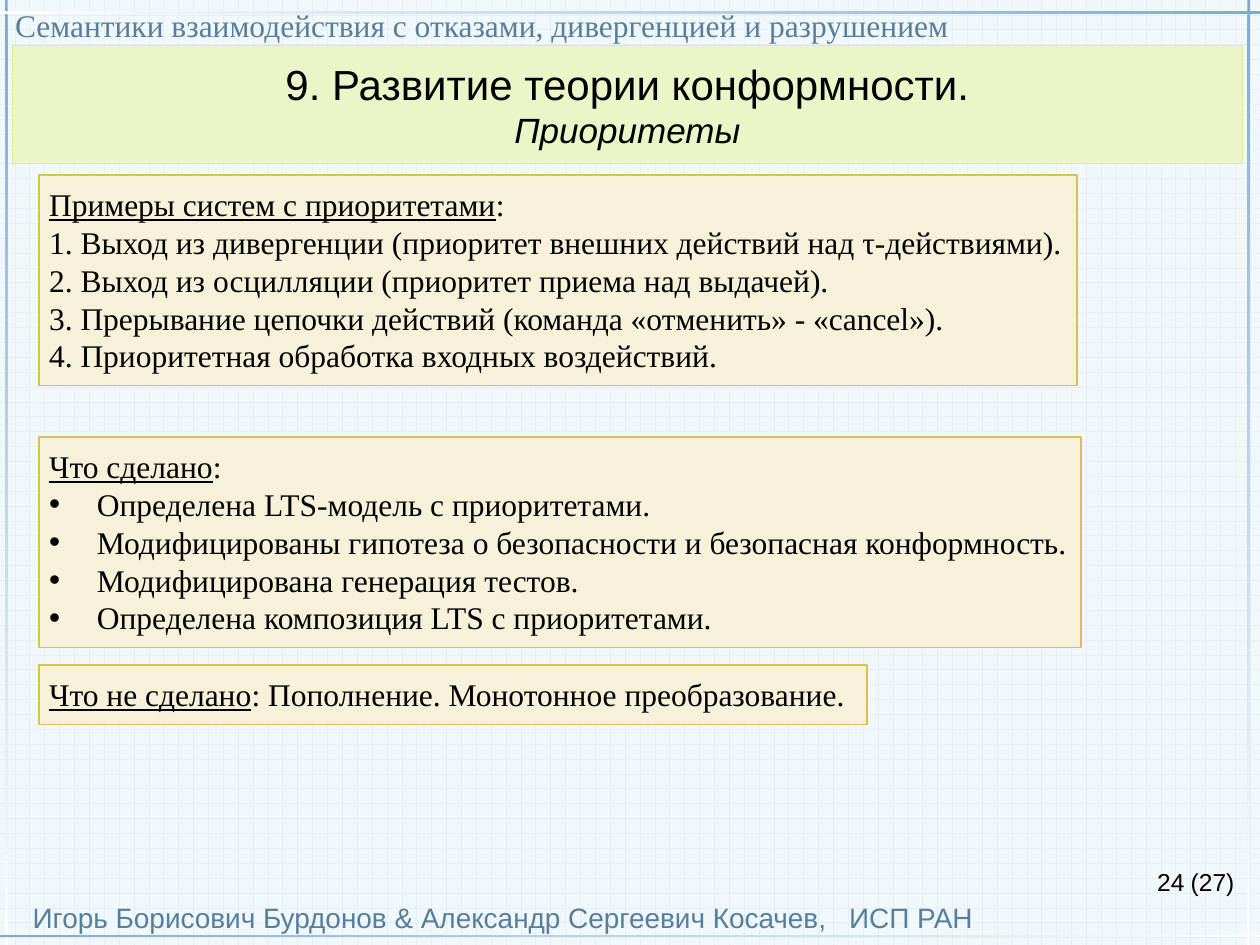
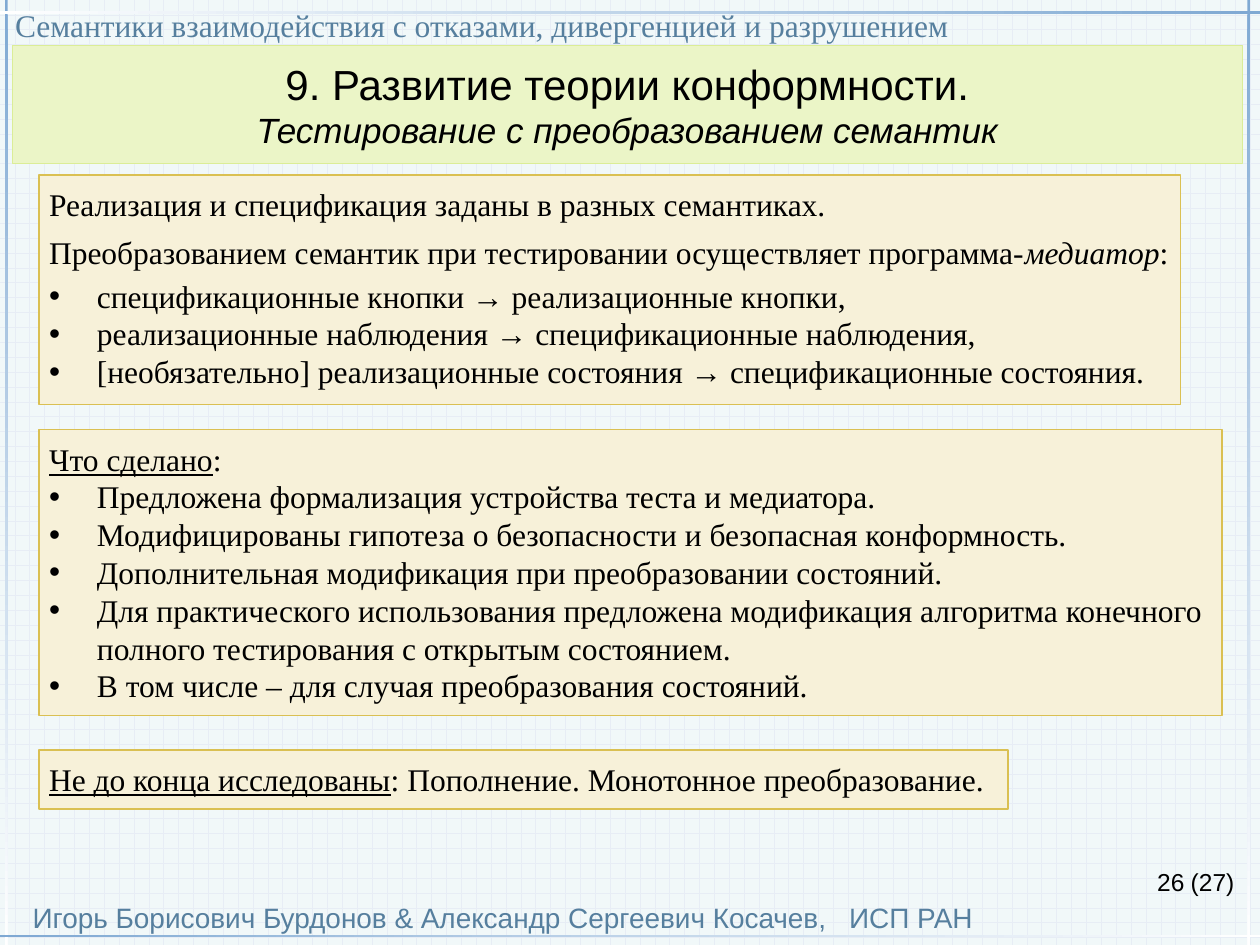
from lxml.etree import SubElement
from pptx import Presentation
from pptx.dml.color import RGBColor
from pptx.enum.dml import MSO_PATTERN
from pptx.enum.shapes import MSO_SHAPE
from pptx.enum.text import MSO_ANCHOR, MSO_AUTO_SIZE, PP_ALIGN
from pptx.oxml.ns import qn
from pptx.util import Inches, Pt

SANS, SERIF = "Arial", "Times New Roman"
BLACK, SLATE, BLUE, WHITE = "000000", "567F9E", "7FA9D3", "FFFFFF"
LIME, MOSS, CREAM, GOLD = "EBF5C7", "DBED97", "F7F1D9", "DAC052"
PAPER, GRID = "F1F8F9", "E7EDF5"
WIDE, HIGH, RULE = 10, 7.5, 0.02
LEFT, HANG, PAD = 0.31, 0.38, 0.08
TOTAL = 27
TOPIC = "Семантики взаимодействия с отказами, дивергенцией и разрушением"
TEAM = "Игорь Борисович Бурдонов & Александр Сергеевич Косачев,"
HOME = "ИСП РАН"
HEAD = "9. Развитие теории конформности."


def tint(code):
    return RGBColor.from_string(code)


def under(label, rest=":"):
    return {"runs": [(label, {"underline": True}), (rest, {})]}


def point(words, **more):
    return {"runs": [(words, {})], "dot": True, **more}


def plain(words, **more):
    return {"runs": [(words, {})], **more}


def write(shape, paras, size=18, face=SERIF, color=BLACK, align=PP_ALIGN.LEFT,
          anchor=MSO_ANCHOR.TOP, pad=(0, 0), wrap=True, grow=False, hang=0, tab=0):
    frame = shape.text_frame
    frame.word_wrap = wrap
    frame.auto_size = MSO_AUTO_SIZE.SHAPE_TO_FIT_TEXT if grow else MSO_AUTO_SIZE.NONE
    frame.vertical_anchor = anchor
    frame.margin_left = frame.margin_right = Inches(pad[0])
    frame.margin_top = frame.margin_bottom = Inches(pad[1])
    for i, item in enumerate(paras):
        para = frame.add_paragraph() if i else frame.paragraphs[0]
        para.alignment = align
        props = para._p.get_or_add_pPr()
        if hang:
            props.set("marL", str(Inches(hang)))
            props.set("indent", str(-Inches(hang)))
        if item.get("dot"):
            SubElement(props, qn("a:buFont"), typeface=SANS)
            SubElement(props, qn("a:buChar"), char="•")
        if tab:
            stops = SubElement(props, qn("a:tabLst"))
            SubElement(stops, qn("a:tab"), pos=str(Inches(tab)), algn="l")
        if "before" in item:
            para.space_before = Pt(item["before"])
        for words, style in item["runs"]:
            for j, line in enumerate(words.split("\n")):
                if j:
                    para.add_line_break()
                run = para.add_run()
                run.text = line
                font = run.font
                font.name, font.size = face, Pt(size)
                font.color.rgb = tint(color)
                for name, value in style.items():
                    setattr(font, name, value)


def label(slide, box, words, **style):
    shape = slide.shapes.add_textbox(*map(Inches, box))
    write(shape, [plain(words)], **style)


def panel(slide, box, fill, edge, width):
    shape = slide.shapes.add_shape(MSO_SHAPE.RECTANGLE, *map(Inches, box))
    shape.shadow.inherit = False
    shape.fill.solid()
    shape.fill.fore_color.rgb = tint(fill)
    shape.line.color.rgb = tint(edge)
    shape.line.width = Pt(width)
    return shape


def fade(slide, box, angle):
    bar = slide.shapes.add_shape(MSO_SHAPE.RECTANGLE, *map(Inches, box))
    bar.shadow.inherit = False
    bar.line.fill.background()
    bar.fill.gradient()
    bar.fill.gradient_angle = angle
    for stop, code, place in zip(bar.fill.gradient_stops, (BLUE, WHITE), (0, 1)):
        stop.color.rgb = tint(code)
        stop.position = place


def border(slide):
    for x in (0.04, 9.9):
        fade(slide, (x, 0, RULE, HIGH), 270)
    for y, angle in ((0.09, 180), (7.42, 0)):
        fade(slide, (0, y, WIDE, RULE), angle)


def frame(slide, page):
    fill = slide.background.fill
    fill.patterned()
    fill.pattern = MSO_PATTERN.HORIZONTAL_BRICK
    fill.fore_color.rgb, fill.back_color.rgb = tint(GRID), tint(PAPER)
    border(slide)
    label(slide, (0.12, 0.05, 9.73, 0.3), TOPIC, color=SLATE)
    label(slide, (0.26, 7.14, 9, 0.27), f"{TEAM}\t{HOME}", size=16, face=SANS,
          color=SLATE, anchor=MSO_ANCHOR.BOTTOM, tab=6.48)
    label(slide, (7.17, 6.83, 2.33, 0.52), str(page), size=14, face=SANS,
          align=PP_ALIGN.RIGHT, pad=(0.1, 0.05))
    label(slide, (9.45, 6.88, 0.35, 0.24), f"({TOTAL})", size=14, face=SANS, wrap=False)


def title(slide, theme):
    shape = panel(slide, (0.1, 0.36, 9.76, 0.94), LIME, MOSS, 0.75)
    runs = [(HEAD + "\n", {}), (theme, {"size": Pt(20), "italic": True})]
    write(shape, [{"runs": runs}], size=24, face=SANS, align=PP_ALIGN.CENTER,
          anchor=MSO_ANCHOR.MIDDLE, pad=(0, 0.1), grow=True)


def note(slide, top, width, height, paras):
    shape = panel(slide, (LEFT, top, width, height), CREAM, GOLD, 1)
    write(shape, paras, pad=(PAD, PAD), wrap=False, grow=True, hang=HANG)


def build(deck, page, theme, notes):
    slide = deck.slides.add_slide(deck.slide_layouts[6])
    frame(slide, page)
    title(slide, theme)
    for item in notes:
        note(slide, *item)


SAFE = "Модифицированы гипотеза о безопасности и безопасная конформность."
REST = ": Пополнение. Монотонное преобразование."

RANKS = [
    (1.39, 8.24, 1.67, [
        under("Примеры систем с приоритетами"),
        plain("1. Выход из дивергенции (приоритет внешних действий над τ-действиями)."),
        plain("2. Выход из осцилляции (приоритет приема над выдачей)."),
        plain("3. Прерывание цепочки действий (команда «отменить» - «cancel»)."),
        plain("4. Приоритетная обработка входных воздействий."),
    ]),
    (3.47, 8.27, 1.67, [
        under("Что сделано"),
        point("Определена LTS-модель с приоритетами."),
        point(SAFE),
        point("Модифицирована генерация тестов."),
        point("Определена композиция LTS с приоритетами."),
    ]),
    (5.28, 6.57, 0.47, [under("Что не сделано", REST)]),
]

TESTS = [
    (1.39, 9.06, 1.82, [
        plain("Реализация и спецификация заданы в разных семантиках."),
        {"runs": [
            ("Преобразованием семантик при тестировании осуществляет программа-", {}),
            ("медиатор", {"italic": True}),
            (":", {}),
        ], "before": 5.4},
        point("спецификационные кнопки → реализационные кнопки,", before=3.6),
        point("реализационные наблюдения → спецификационные наблюдения,"),
        point("[необязательно] реализационные состояния → спецификационные состояния."),
    ]),
    (3.41, 9.39, 2.27, [
        under("Что сделано"),
        point("Предложена формализация устройства теста и медиатора."),
        point(SAFE),
        point("Дополнительная модификация при преобразовании состояний."),
        point("Для практического использования предложена модификация алгоритма конечного\n"
              "полного тестирования с открытым состоянием."),
        point("В том числе – для случая преобразования состояний."),
    ]),
    (5.95, 7.69, 0.47, [under("Не до конца исследованы", REST)]),
]


def main():
    deck = Presentation()
    deck.slide_width, deck.slide_height = Inches(WIDE), Inches(HIGH)
    build(deck, 24, "Приоритеты", RANKS)
    build(deck, 26, "Тестирование с преобразованием семантик", TESTS)
    deck.save("out.pptx")


if __name__ == "__main__":
    main()
